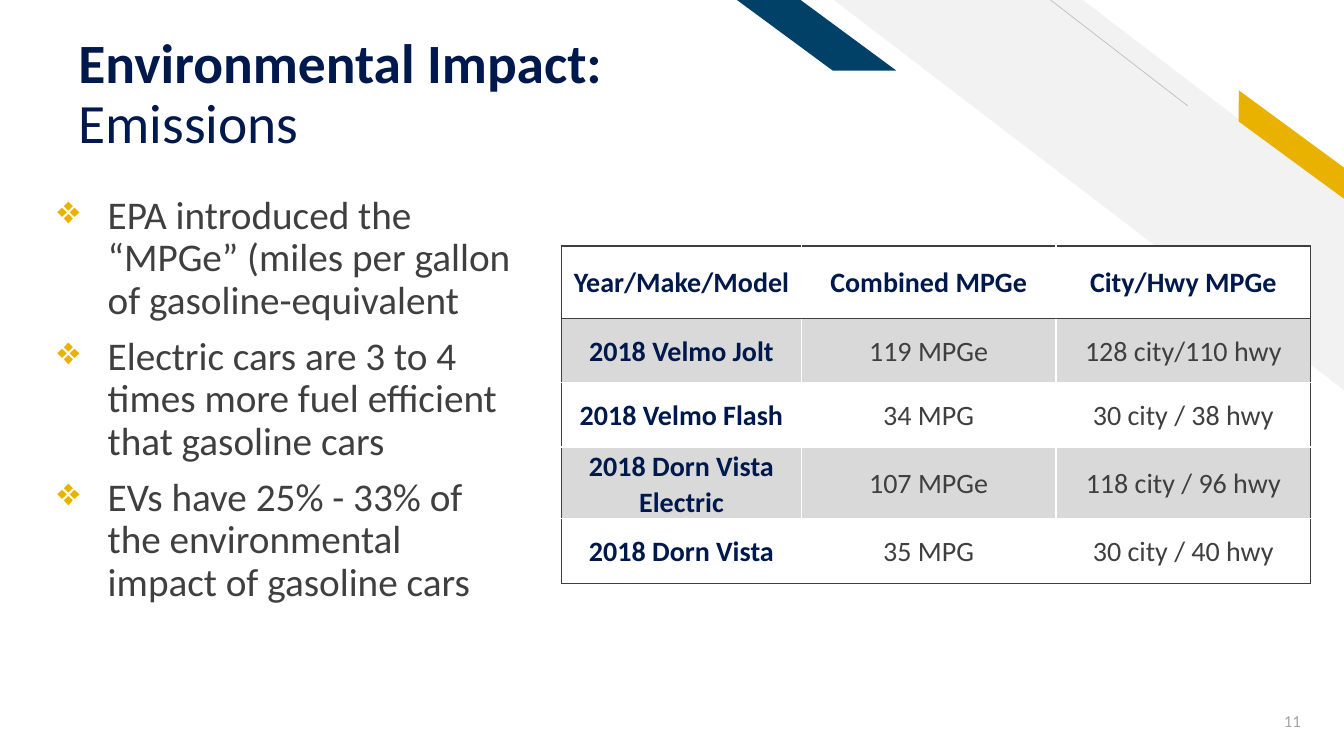
from lxml.etree import SubElement
from pptx import Presentation
from pptx.dml.color import RGBColor
from pptx.enum.shapes import MSO_CONNECTOR as CONN, MSO_SHAPE as SHAPE
from pptx.enum.text import MSO_ANCHOR as ANCHOR, PP_ALIGN as ALIGN
from pptx.oxml.ns import qn
from pptx.util import Inches, Pt

NAVY = RGBColor(0x00, 0x19, 0x4C)
BLUE = RGBColor(0x01, 0x40, 0x67)
GOLD = RGBColor(0xEA, 0xB2, 0x00)
DARK = RGBColor(0x3F, 0x3F, 0x3F)
MUTED = RGBColor(0xA5, 0xA5, 0xA5)
RULE = RGBColor(0xBF, 0xBF, 0xBF)
BAND = RGBColor(0xD9, 0xD9, 0xD9)
PALE = RGBColor(0xF2, 0xF2, 0xF2)
WHITE = RGBColor(0xFF, 0xFF, 0xFF)
FONT = "Calibri"
WIDTH, HEIGHT = Inches(13.33), Inches(7.5)

BULLETS = [
    "EPA introduced the “MPGe” (miles per gallon of gasoline-equivalent",
    "Electric cars are 3 to 4 times more fuel efficient that gasoline cars",
    "EVs have 25% - 33% of the environmental impact of gasoline cars",
]
MILEAGE = [
    ("Year/Make/Model", "Combined MPGe", "City/Hwy MPGe"),
    ("2018 Velmo Jolt", "119 MPGe", "128 city/110 hwy"),
    ("2018 Velmo Flash", "34 MPG", "30 city / 38 hwy"),
    ("2018 Dorn Vista Electric", "107 MPGe", "118 city / 96 hwy"),
    ("2018 Dorn Vista", "35 MPG", "30 city / 40 hwy"),
]
COLUMN_SHARES = (0.32, 0.34, 0.34)
ROW_SHARES = (0.22, 0.195, 0.195, 0.195, 0.195)


def area(x, y, w, h):
    """Turn percentages of the slide into left, top, width, height."""
    return (round(WIDTH * x / 100), round(HEIGHT * y / 100),
            round(WIDTH * w / 100), round(HEIGHT * h / 100))


def add_run(p, text, size, color, bold=False):
    r = p.add_run()
    r.text = text
    r.font.name, r.font.size, r.font.bold = FONT, Pt(size), bold
    r.font.color.rgb = color


def add_text_frame(s, box, anchor):
    tf = s.shapes.add_textbox(*box).text_frame
    tf.word_wrap = True
    tf.vertical_anchor = anchor
    return tf


def add_band(s, box, kind, adjustment, color, rotation=0):
    """Place a mirrored slanted band."""
    sp = s.shapes.add_shape(kind, *box)
    sp.shadow.inherit = False
    sp.adjustments[0] = adjustment
    sp.fill.solid()
    sp.fill.fore_color.rgb = color
    sp.line.fill.background()
    sp.rotation = rotation
    sp._element.spPr.find(qn("a:xfrm")).set("flipH", "1")


def add_decoration(s):
    add_band(s, area(62.04, 0, 37.96, 51.6), SHAPE.DIAGONAL_STRIPE, 0.512, PALE)
    x, y, w, h = area(78.17, 0, 10.2, 14)
    line = s.shapes.add_connector(CONN.STRAIGHT, x, y, x + w, y + h)
    line.line.color.rgb, line.line.width = RULE, Pt(0.5)
    SubElement(line._element.spPr, qn("a:effectLst"))
    add_band(s, area(90.55, 17.47, 11.1, 3.33), SHAPE.PARALLELOGRAM, 0.72, GOLD, 36.3)
    add_band(s, area(54.84, 0, 11.85, 9.33), SHAPE.PARALLELOGRAM, 1.356, BLUE)


def add_title(s, box):
    tf = add_text_frame(s, box, ANCHOR.BOTTOM)
    tf.margin_bottom = 0
    p = tf.paragraphs[0]
    p.line_spacing = 0.9
    add_run(p, "Environmental Impact: ", 39.6, NAVY, True)
    p.add_line_break()
    add_run(p, "Emissions", 39.6, NAVY)


def add_bullets(s, box):
    tf = add_text_frame(s, box, ANCHOR.TOP)
    for i, text in enumerate(BULLETS):
        p = tf.add_paragraph() if i else tf.paragraphs[0]
        p.line_spacing = 0.9
        p.space_before = Pt(10 if i else 0)
        pPr = p._p.get_or_add_pPr()
        pPr.set("marL", str(Inches(0.5)))
        pPr.set("indent", str(-Inches(0.5)))
        color = SubElement(pPr, qn("a:buClr"))
        SubElement(color, qn("a:srgbClr"), val=str(GOLD))
        SubElement(pPr, qn("a:buChar"), char="❖")
        add_run(p, text, 28, DARK)


def add_borders(cell, colors):
    """Draw the left, right, top and bottom borders in the given colours."""
    tcPr = cell._tc.get_or_add_tcPr()
    for side, color in zip("LRTB", colors):
        ln = SubElement(tcPr, qn(f"a:ln{side}"), w=str(Pt(1)))
        fill = SubElement(ln, qn("a:solidFill"))
        SubElement(fill, qn("a:srgbClr"), val=str(color))


def add_mileage_table(s, box):
    last_row, last_col = len(MILEAGE) - 1, len(COLUMN_SHARES) - 1
    table = s.shapes.add_table(last_row + 1, last_col + 1, *box).table
    for column, share in zip(table.columns, COLUMN_SHARES):
        column.width = round(box[2] * share)
    for row, share in zip(table.rows, ROW_SHARES):
        row.height = round(box[3] * share)
    for i, values in enumerate(MILEAGE):
        for j, text in enumerate(values):
            cell = table.cell(i, j)
            dark_sides = (j == 0, j == last_col, i < 2, i in (0, last_row))
            add_borders(cell, [DARK if dark else WHITE for dark in dark_sides])
            cell.fill.solid()
            cell.fill.fore_color.rgb = BAND if i % 2 else WHITE
            cell.vertical_anchor = ANCHOR.MIDDLE
            cell.margin_left = cell.margin_right = Inches(0.07)
            cell.margin_top = cell.margin_bottom = 0
            p = cell.text_frame.paragraphs[0]
            p.alignment, p.line_spacing = ALIGN.CENTER, 1.07
            heading = i == 0 or j == 0
            add_run(p, text, 20, NAVY if heading else DARK, heading)


def add_slide_number(s, box):
    p = add_text_frame(s, box, ANCHOR.MIDDLE).paragraphs[0]
    p.alignment = ALIGN.RIGHT
    add_run(p, "11", 12, MUTED)


def main():
    prs = Presentation()
    prs.slide_width, prs.slide_height = WIDTH, HEIGHT
    s = prs.slides.add_slide(prs.slide_layouts[6])
    add_decoration(s)
    add_title(s, area(5.1, 3.73, 68.34, 16.8))
    add_bullets(s, area(3.53, 25.2, 35.78, 63.73))
    add_slide_number(s, area(91.45, 92.67, 6.08, 5.33))
    add_mileage_table(s, area(41.79, 32.53, 55.74, 43.6))
    prs.save("out.pptx")


if __name__ == "__main__":
    main()
